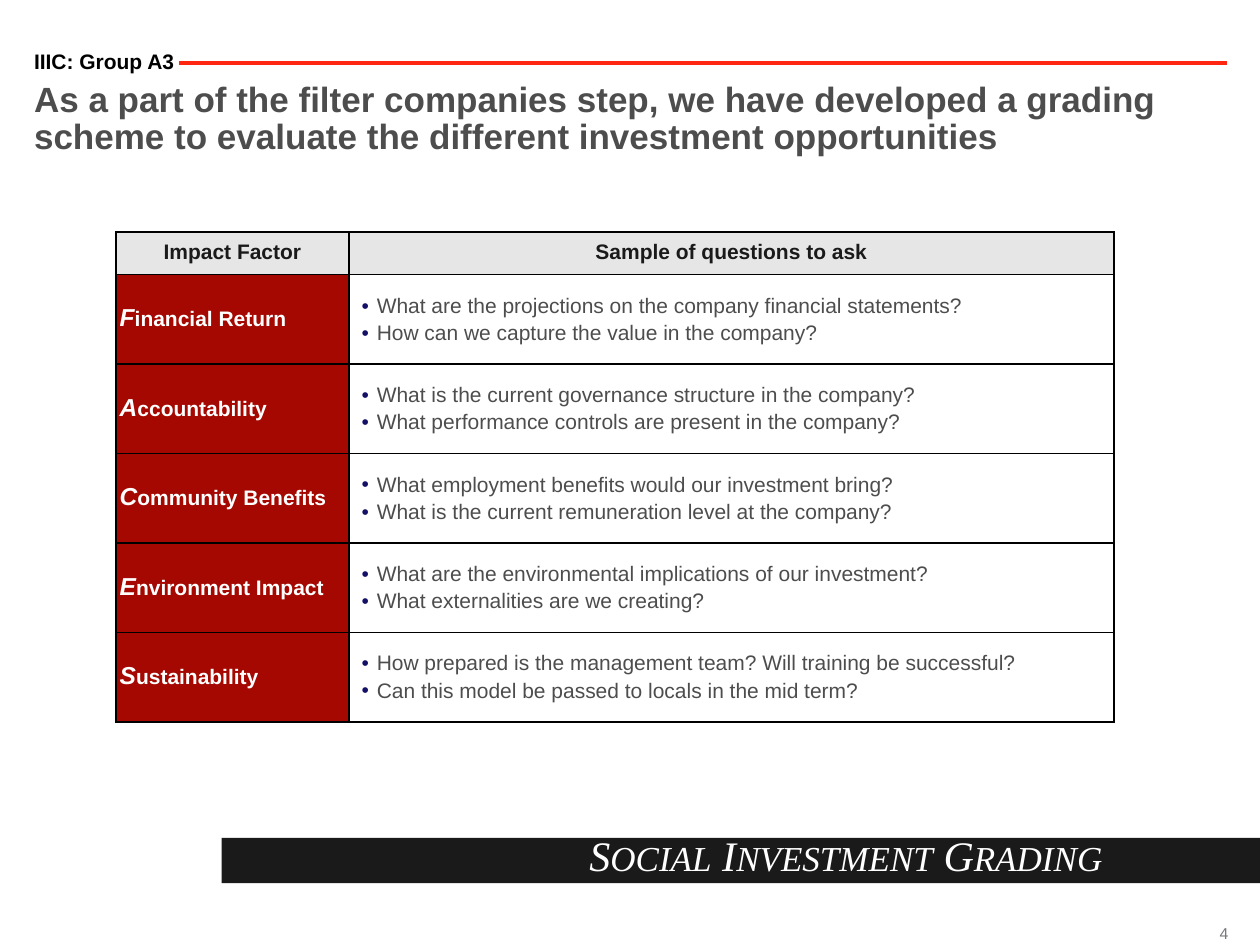
import pptx
import pptx.dml.color
import pptx.enum.shapes
import pptx.enum.text
import pptx.oxml
import pptx.oxml.ns
import pptx.util
from pptx.util import Inches

# Content
TITLE = ("As a part of the filter companies step, we have developed a grading "
         "scheme to evaluate the different investment opportunities")
GROUP = "IIIC: Group A3"
BANNER = "Social Investment Grading"
PAGE_NUMBER = "4"
HEADERS = ["Impact Factor", "Sample of questions to ask"]
FACTORS = [
    ("Financial Return",
     ["What are the projections on the company financial statements?",
      "How can we capture the value in the company?"]),
    ("Accountability",
     ["What is the current governance structure in the company?",
      "What performance controls are present in the company?"]),
    ("Community Benefits",
     ["What employment benefits would our investment bring?",
      "What is the current remuneration level at the company?"]),
    ("Environment Impact",
     ["What are the environmental implications of our investment?",
      "What externalities are we creating?"]),
    ("Sustainability",
     ["How prepared is the management team? Will training be successful?",
      "Can this model be passed to locals in the mid term?"]),
]

# Layout and style
COLUMN_WIDTHS = [1.85, 6.07]
ROW_HEIGHTS = [0.34] + [0.71] * len(FACTORS)
BLACK, DARK, GREY, WHITE = "000000", "1A1A1A", "4D4D4D", "FFFFFF"
RED, DARK_RED, LIGHT_GREY, NAVY, PAGE_GREY = "FF2712", "A40800", "E6E6E6", "141066", "77787B"
ALIGN = pptx.enum.text.PP_ALIGN
ANCHOR = pptx.enum.text.MSO_ANCHOR


def color(hex_text):
    return pptx.dml.color.RGBColor.from_string(hex_text)


def add_xml(parent, xml):
    namespace = pptx.oxml.ns.nsdecls("a")
    parent.append(pptx.oxml.parse_xml(xml.replace("XMLNS", namespace)))


def style_run(run, size, hex_text, bold=False, italic=False, name="Arial"):
    font = run.font
    font.size, font.bold, font.italic, font.name = pptx.util.Pt(size), bold, italic, name
    font.color.rgb = color(hex_text)


def add_run(paragraph, text, *style, **options):
    run = paragraph.add_run()
    run.text = text
    style_run(run, *style, **options)


def set_frame(frame, anchor=ANCHOR.TOP, wrap=True):
    frame.margin_left = frame.margin_right = frame.margin_top = frame.margin_bottom = 0
    frame.auto_size = pptx.enum.text.MSO_AUTO_SIZE.NONE
    frame.vertical_anchor, frame.word_wrap = anchor, wrap
    return frame.paragraphs[0]


def add_text_box(slide, left, top, width, height, **options):
    box = slide.shapes.add_textbox(Inches(left), Inches(top), Inches(width), Inches(height))
    return set_frame(box.text_frame, **options)


def format_cell(cell, margin, fill=None):
    cell.margin_left = cell.margin_right = Inches(margin)
    cell.margin_top = cell.margin_bottom = Inches(margin)
    cell.vertical_anchor = ANCHOR.MIDDLE
    properties = cell._tc.get_or_add_tcPr()
    for side in "LRTB":
        add_xml(properties, f'<a:ln{side} XMLNS w="12700"><a:solidFill>'
                            f'<a:srgbClr val="{BLACK}"/></a:solidFill></a:ln{side}>')
    if fill:
        cell.fill.solid()
        cell.fill.fore_color.rgb = color(fill)
    else:
        cell.fill.background()


def add_bullet(paragraph):
    paragraph.space_before = pptx.util.Pt(2)
    properties = paragraph._p.get_or_add_pPr()
    properties.set("marL", str(Inches(0.19)))
    properties.set("indent", str(Inches(-0.12)))
    add_xml(properties, f'<a:buClr XMLNS><a:srgbClr val="{NAVY}"/></a:buClr>')
    add_xml(properties, '<a:buFont XMLNS typeface="Arial"/>')
    add_xml(properties, '<a:buChar XMLNS char="•"/>')


def add_heading(slide):
    title = slide.shapes.title
    title.left, title.top = Inches(0.27), Inches(0.65)
    title.width, title.height = Inches(9.46), Inches(0.68)
    title.text_frame.text = TITLE
    paragraph = set_frame(title.text_frame)
    paragraph.alignment, paragraph.line_spacing = ALIGN.LEFT, 0.9
    style_run(paragraph.runs[0], 20, GREY, bold=True)

    group = add_text_box(slide, 0.27, 0.41, 1.41, 0.18)
    group.line_spacing = 0.9
    add_run(group, GROUP, 12, BLACK, bold=True)

    rule = slide.shapes.add_connector(pptx.enum.shapes.MSO_CONNECTOR.STRAIGHT,
                                      Inches(1.42), Inches(0.5), Inches(9.74), Inches(0.5))
    rule.line.color.rgb = color(RED)
    rule.line.width = pptx.util.Pt(2.25)
    add_xml(rule._element.spPr, "<a:effectLst XMLNS/>")


def add_grading_table(slide):
    table = slide.shapes.add_table(
        len(ROW_HEIGHTS), len(COLUMN_WIDTHS), Inches(0.92), Inches(1.84),
        Inches(sum(COLUMN_WIDTHS)), Inches(sum(ROW_HEIGHTS))).table
    for column, width in zip(table.columns, COLUMN_WIDTHS):
        column.width = Inches(width)
    for row, height in zip(table.rows, ROW_HEIGHTS):
        row.height = Inches(height)

    for column, header in enumerate(HEADERS):
        cell = table.cell(0, column)
        format_cell(cell, 0.01, LIGHT_GREY)
        paragraph = cell.text_frame.paragraphs[0]
        paragraph.alignment, paragraph.line_spacing = ALIGN.CENTER, 0.9
        add_run(paragraph, header, 12, DARK, bold=True)

    for row, (factor, questions) in enumerate(FACTORS, start=1):
        factor_cell, question_cell = table.cell(row, 0), table.cell(row, 1)
        format_cell(factor_cell, 0.03, DARK_RED)
        paragraph = factor_cell.text_frame.paragraphs[0]
        paragraph.line_spacing = 0.9
        add_run(paragraph, factor[0], 14, WHITE, bold=True, italic=True)
        add_run(paragraph, factor[1:], 12, WHITE, bold=True)

        format_cell(question_cell, 0.03)
        question_cell.text_frame.text = "\n".join(questions)
        for paragraph in question_cell.text_frame.paragraphs:
            add_bullet(paragraph)
            style_run(paragraph.runs[0], 12, GREY)


def add_footer(slide):
    bar = slide.shapes.add_shape(pptx.enum.shapes.MSO_SHAPE.RECTANGLE,
                                 Inches(1.76), Inches(6.65), Inches(8.25), Inches(0.36))
    bar.shadow.inherit = False
    bar.fill.solid()
    bar.fill.fore_color.rgb = color(DARK)
    bar.line.fill.background()

    # Small capitals: a large initial, then smaller capitals
    banner = add_text_box(slide, 1.22, 6.58, 7.53, 0.46)
    banner.alignment = ALIGN.RIGHT
    for index, word in enumerate(BANNER.split()):
        initial = (" " if index else "") + word[0]
        for text, size in ((initial, 24), (word[1:].upper(), 20)):
            add_run(banner, text, size, WHITE, italic=True, name="Times New Roman")

    number = add_text_box(slide, 9.6, 7.34, 0.15, 0.14, anchor=ANCHOR.MIDDLE, wrap=False)
    number.alignment = ALIGN.RIGHT
    add_run(number, PAGE_NUMBER, 9, PAGE_GREY)


def main():
    presentation = pptx.Presentation()
    presentation.slide_width, presentation.slide_height = Inches(10), Inches(7.5)
    slide = presentation.slides.add_slide(presentation.slide_layouts[5])
    add_heading(slide)
    add_grading_table(slide)
    add_footer(slide)
    presentation.save("out.pptx")


if __name__ == "__main__":
    main()
